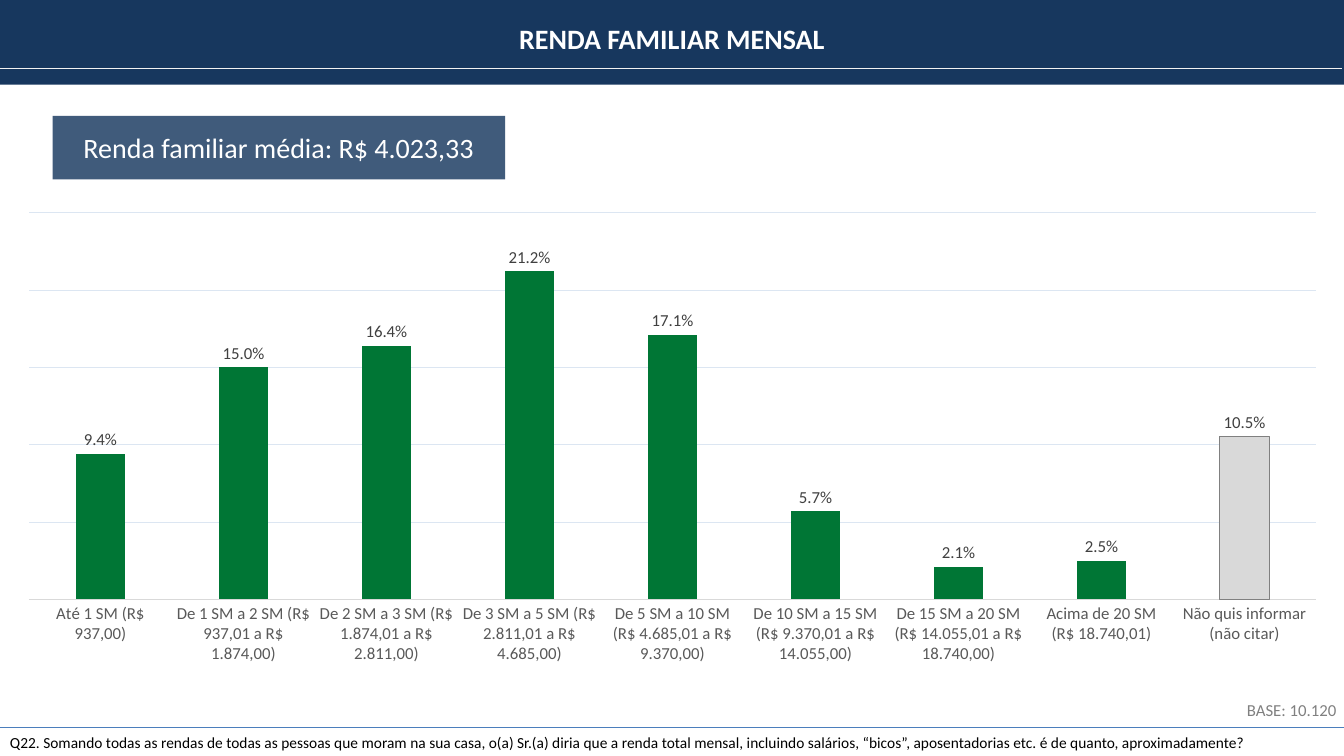
from dataclasses import dataclass

from lxml.etree import SubElement
from pptx import Presentation
from pptx.chart.data import CategoryChartData
from pptx.dml.color import RGBColor
from pptx.enum.chart import XL_CHART_TYPE, XL_LABEL_POSITION, XL_TICK_MARK
from pptx.enum.shapes import MSO_CONNECTOR, MSO_SHAPE
from pptx.enum.text import MSO_ANCHOR, MSO_AUTO_SIZE, PP_ALIGN
from pptx.oxml.ns import qn
from pptx.util import Pt


@dataclass(frozen=True)
class Theme:
    font: str = "Calibri"
    navy: str = "17375E"
    blue: str = "4B7EBC"
    green: str = "007635"
    white: str = "FFFFFF"
    black: str = "000000"
    pale: str = "F2F2F2"
    grid: str = "DCE6F2"
    light: str = "D9D9D9"
    gray: str = "808080"
    dark: str = "595959"
    label: str = "404040"
    head: int = 20
    body: int = 12
    note: int = 11


INCOME = [
    ("Até 1 SM (R$ 937,00)", 0.094),
    ("De 1 SM a 2 SM (R$ 937,01 a R$ 1.874,00)", 0.15),
    ("De 2 SM a 3 SM (R$ 1.874,01 a R$ 2.811,00)", 0.164),
    ("De 3 SM a 5 SM (R$ 2.811,01 a R$ 4.685,00)", 0.212),
    ("De 5 SM a 10 SM (R$ 4.685,01 a R$ 9.370,00)", 0.171),
    ("De 10 SM a 15 SM (R$ 9.370,01 a R$ 14.055,00)", 0.057),
    ("De 15 SM a 20 SM (R$ 14.055,01 a R$ 18.740,00)", 0.021),
    ("Acima de 20 SM (R$ 18.740,01)", 0.025),
    ("Não quis informar (não citar)", 0.105),
]


def paint(font, name, size, color, bold=False):
    font.name, font.size, font.bold = name, Pt(size), bold
    font.color.rgb = RGBColor.from_string(color)


def write(frame, text, *, font, size, color, bold=False,
          align=PP_ALIGN.LEFT, anchor=MSO_ANCHOR.TOP, fit=MSO_AUTO_SIZE.NONE):
    frame.word_wrap = True
    frame.auto_size = fit
    frame.vertical_anchor = anchor
    para = frame.paragraphs[0]
    para.alignment = align
    run = para.add_run()
    run.text = text
    paint(run.font, font, size, color, bold)


class Page:
    def __init__(self, deck, theme):
        self.theme = theme
        self.slide = deck.slides.add_slide(deck.slide_layouts[5])
        self.shapes = self.slide.shapes

    def ink(self, line, color, width=0.75):
        line.color.rgb = RGBColor.from_string(color)
        line.width = Pt(width)

    def title(self, text, x, y, w, h):
        box = self.shapes.title
        box.left, box.top, box.width, box.height = map(Pt, (x, y, w, h))
        write(box.text_frame, text, font=self.theme.font, size=self.theme.head,
              color=self.theme.white, bold=True, align=PP_ALIGN.CENTER,
              fit=MSO_AUTO_SIZE.SHAPE_TO_FIT_TEXT)
        # Bring the title in front of its banner
        box.element.getparent().append(box.element)

    def text(self, text, x, y, w, h, **form):
        box = self.shapes.add_textbox(*map(Pt, (x, y, w, h)))
        write(box.text_frame, text, font=self.theme.font,
              fit=MSO_AUTO_SIZE.SHAPE_TO_FIT_TEXT, **form)

    def rect(self, x, y, w, h, color, alpha=None):
        box = self.shapes.add_shape(MSO_SHAPE.RECTANGLE, *map(Pt, (x, y, w, h)))
        box.shadow.inherit = False
        box.fill.solid()
        box.fill.fore_color.rgb = RGBColor.from_string(color)
        box.line.fill.background()
        if alpha:
            tint = next(box.element.iter(qn("a:srgbClr")))
            SubElement(tint, qn("a:alpha")).set("val", str(alpha * 1000))
        return box

    def rule(self, x, y, w, color, width):
        line = self.shapes.add_connector(
            MSO_CONNECTOR.STRAIGHT, *map(Pt, (x, y, x + w, y)))
        self.ink(line.line, color, width)
        SubElement(line.element.spPr, qn("a:effectLst"))

    def bars(self, rows, x, y, w, h):
        look = self.theme
        data = CategoryChartData(number_format="0.0%")
        data.categories = [name for name, _ in rows]
        data.add_series("Series 1", [share for _, share in rows])
        chart = self.shapes.add_chart(
            XL_CHART_TYPE.COLUMN_CLUSTERED, *map(Pt, (x, y, w, h)), data).chart
        chart.has_legend = chart.has_title = False
        paint(chart.font, look.font, 10, look.black)

        # Axes
        cats, vals = chart.category_axis, chart.value_axis
        cats.major_tick_mark = cats.minor_tick_mark = XL_TICK_MARK.NONE
        paint(cats.tick_labels.font, look.font, look.body, look.dark)
        self.ink(cats.format.line, look.light)
        vals.visible = False
        vals.minimum_scale, vals.maximum_scale, vals.major_unit = 0, 0.25, 0.05
        self.ink(vals.major_gridlines.format.line, look.grid)

        # Columns, with the last one set apart
        plot = chart.plots[0]
        plot.gap_width, plot.overlap, plot.vary_by_categories = 191, -27, False
        bars = plot.series[0]
        bars.invert_if_negative = False
        last = bars.points[len(rows) - 1]
        for part, color in ((bars, look.green), (last, look.light)):
            part.format.fill.solid()
            part.format.fill.fore_color.rgb = RGBColor.from_string(color)
        self.ink(last.format.line, look.gray)

        # Labels
        tags = bars.data_labels
        tags.show_value = True
        tags.number_format, tags.number_format_is_linked = "0.0%", False
        tags.position = XL_LABEL_POSITION.OUTSIDE_END
        paint(tags.font, look.font, look.body, look.label)

        # Inner plot area as shares of the chart
        area = next(chart.element.iter(qn("c:plotArea")))
        for old in area.findall(qn("c:layout")):
            area.remove(old)
        room = SubElement(area, qn("c:layout"))
        area.insert(0, room)
        place = SubElement(room, qn("c:manualLayout"))
        for tag, val in (("layoutTarget", "inner"), ("xMode", "edge"),
                         ("yMode", "edge"), ("x", "0.012"), ("y", "0.067"),
                         ("w", "0.977"), ("h", "0.778")):
            SubElement(place, qn("c:" + tag)).set("val", val)


def main():
    deck = Presentation()
    deck.slide_width, deck.slide_height = Pt(960), Pt(540)
    look = Theme()
    page = Page(deck, look)

    # Question at the foot
    page.rule(0, 519.8, 960, look.blue, 0.75)
    page.text("Q22. Somando todas as rendas de todas as pessoas que moram na sua "
              "casa, o(a) Sr.(a) diria que a renda total mensal, incluindo "
              "salários, “bicos”, aposentadorias etc. é de quanto, "
              "aproximadamente?", 0, 519.8, 958.5, 20.6,
              size=look.note, color=look.black)

    # Banner
    page.rect(-0.5, 0, 960.5, 60.5, look.navy)
    page.title("RENDA FAMILIAR MENSAL", 0, 11.5, 960, 31.5)
    page.rule(-2, 49, 960.5, look.pale, 1)

    # Chart and its base
    page.text("BASE: 10.120", 797.8, 496, 164, 21.8, size=look.body,
              color=look.gray, align=PP_ALIGN.RIGHT)
    page.bars(INCOME, 9.4, 128.2, 941, 355)

    # Mean income
    mean = page.rect(37.5, 82.8, 323.3, 45.4, look.navy, alpha=82)
    write(mean.text_frame, "Renda familiar média: R$ 4.023,33", font=look.font,
          size=look.head, color=look.white, align=PP_ALIGN.CENTER,
          anchor=MSO_ANCHOR.MIDDLE)

    deck.save("out.pptx")


if __name__ == "__main__":
    main()
